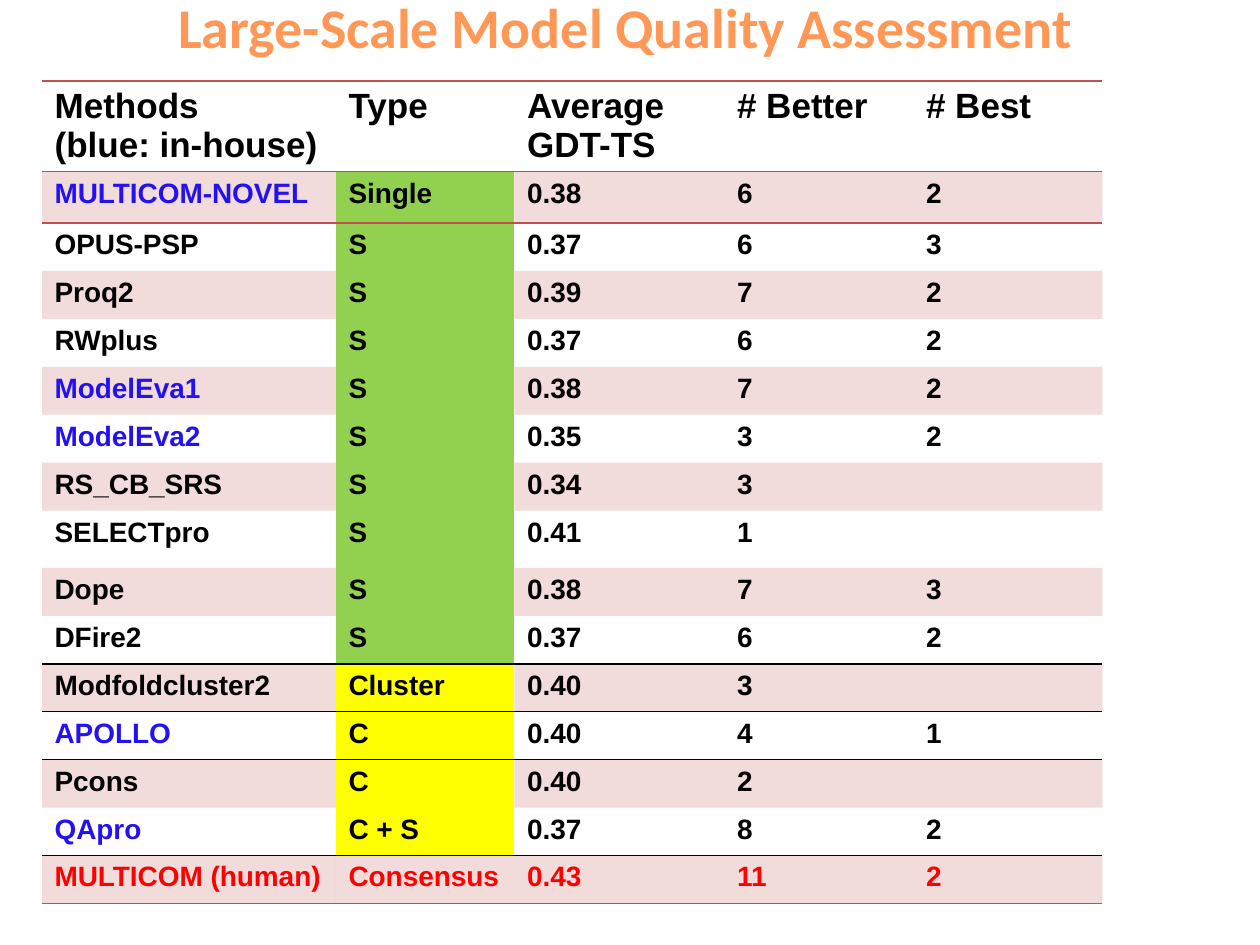
from lxml.etree import SubElement
from pptx import Presentation
from pptx.dml.color import RGBColor as RGB
from pptx.enum.text import MSO_ANCHOR as ANCHOR, PP_ALIGN as ALIGN
from pptx.oxml.ns import qn
from pptx.util import Pt

COLORS = {"title": "FF9856", "text": "000000", "in_house": "2311F2",
          "human": "FF0000", "accent": "C0504D", "single": "92D050",
          "cluster": "FFFF00"}
NO_STYLE = "{2D5ABB26-0587-4C30-8999-92F81FD0307C}"

HEADER = ["Methods\n(blue: in-house)", "Type", "Average\nGDT-TS", "# Better", "# Best"]
ROWS = [HEADER] + [
    ["MULTICOM-NOVEL", "Single", "0.38", "6", "2"],
    ["OPUS-PSP", "S", "0.37", "6", "3"],
    ["Proq2", "S", "0.39", "7", "2"],
    ["RWplus", "S", "0.37", "6", "2"],
    ["ModelEva1", "S", "0.38", "7", "2"],
    ["ModelEva2", "S", "0.35", "3", "2"],
    ["RS_CB_SRS", "S", "0.34", "3", ""],
    ["SELECTpro", "S", "0.41", "1", ""],
    ["Dope", "S", "0.38", "7", "3"],
    ["DFire2", "S", "0.37", "6", "2"],
    ["Modfoldcluster2", "Cluster", "0.40", "3", ""],
    ["APOLLO", "C", "0.40", "4", "1"],
    ["Pcons", "C", "0.40", "2", ""],
    ["QApro", "C + S", "0.37", "8", "2"],
    ["MULTICOM (human)", "Consensus", "0.43", "11", "2"],
]
IN_HOUSE = {"MULTICOM-NOVEL", "ModelEva1", "ModelEva2", "APOLLO", "QApro"}
TYPE_FILLS = {"Single": "single", "S": "single", "Cluster": "cluster",
              "C": "cluster", "C + S": "cluster"}
COL_WIDTHS = [168, 102, 120, 108, 108]
ROW_HEIGHT = 27.4
TALL_ROWS = {0: 51.5, 1: 29.4, 8: 32.8}
LAST = len(ROWS) - 1
# Rules by the number of rows above them
RULES = {0: "accent", 1: "accent", 11: "text", 12: "text", 15: "text", LAST + 1: "accent"}


def add_border(cell, tag, color):
    ln = SubElement(cell._tc.get_or_add_tcPr(), qn(tag), w=str(Pt(1)))
    fill = SubElement(ln, qn("a:solidFill"))
    SubElement(fill, qn("a:srgbClr"), val=COLORS[color])


prs = Presentation()
prs.slide_width, prs.slide_height = Pt(720), Pt(540)
s = prs.slides.add_slide(prs.slide_layouts[5])

title = s.shapes.title
title.left, title.top, title.width, title.height = Pt(7.2), Pt(-30.2), Pt(700.6), Pt(90)
tf = title.text_frame
tf.vertical_anchor = ANCHOR.MIDDLE
p = tf.paragraphs[0]
p.alignment = ALIGN.CENTER
r = p.add_run()
r.text = "Large-Scale Model Quality Assessment"
r.font.name, r.font.size, r.font.bold = "Calibri", Pt(32), True
r.font.color.rgb = RGB.from_string(COLORS["title"])

heights = [TALL_ROWS.get(i, ROW_HEIGHT) for i in range(len(ROWS))]
table = s.shapes.add_table(len(ROWS), len(COL_WIDTHS), Pt(24), Pt(46.2),
                           Pt(sum(COL_WIDTHS)), Pt(sum(heights))).table
table.first_row = table.horz_banding = False
table._tbl.tblPr.find(qn("a:tableStyleId")).text = NO_STYLE
for col, width in zip(table.columns, COL_WIDTHS):
    col.width = Pt(width)

for i, values in enumerate(ROWS):
    table.rows[i].height = Pt(heights[i])
    size = Pt(20 if i == 0 else 16)
    for j, value in enumerate(values):
        cell = table.cell(i, j)
        if i in RULES:
            add_border(cell, "a:lnT", RULES[i])
        if i + 1 in RULES:
            add_border(cell, "a:lnB", RULES[i + 1])

        if i > 0 and j == 1 and value in TYPE_FILLS:
            cell.fill.solid()
            cell.fill.fore_color.rgb = RGB.from_string(COLORS[TYPE_FILLS[value]])
        elif i % 2:
            cell.fill.solid()
            cell.fill.fore_color.rgb = RGB.from_string(COLORS["accent"])
            accent = cell._tc.tcPr.find(".//" + qn("a:solidFill") + "[last()]/..")
            accent = cell._tc.tcPr.find(qn("a:solidFill")).find(qn("a:srgbClr"))
            SubElement(accent, qn("a:alpha"), val="20000")
        else:
            cell.fill.background()

        color = "human" if i == LAST else "in_house" if value in IN_HOUSE else "text"
        tf = cell.text_frame
        for n, line in enumerate(value.split("\n")):
            p = tf.add_paragraph() if n else tf.paragraphs[0]
            if not line:
                # Keeps the empty cell from stretching its row
                p._p.get_or_add_endParaRPr().set("sz", "1600")
                continue
            r = p.add_run()
            r.text = line
            r.font.name, r.font.size, r.font.bold = "Arial", size, True
            r.font.color.rgb = RGB.from_string(COLORS[color])

prs.save("out.pptx")
